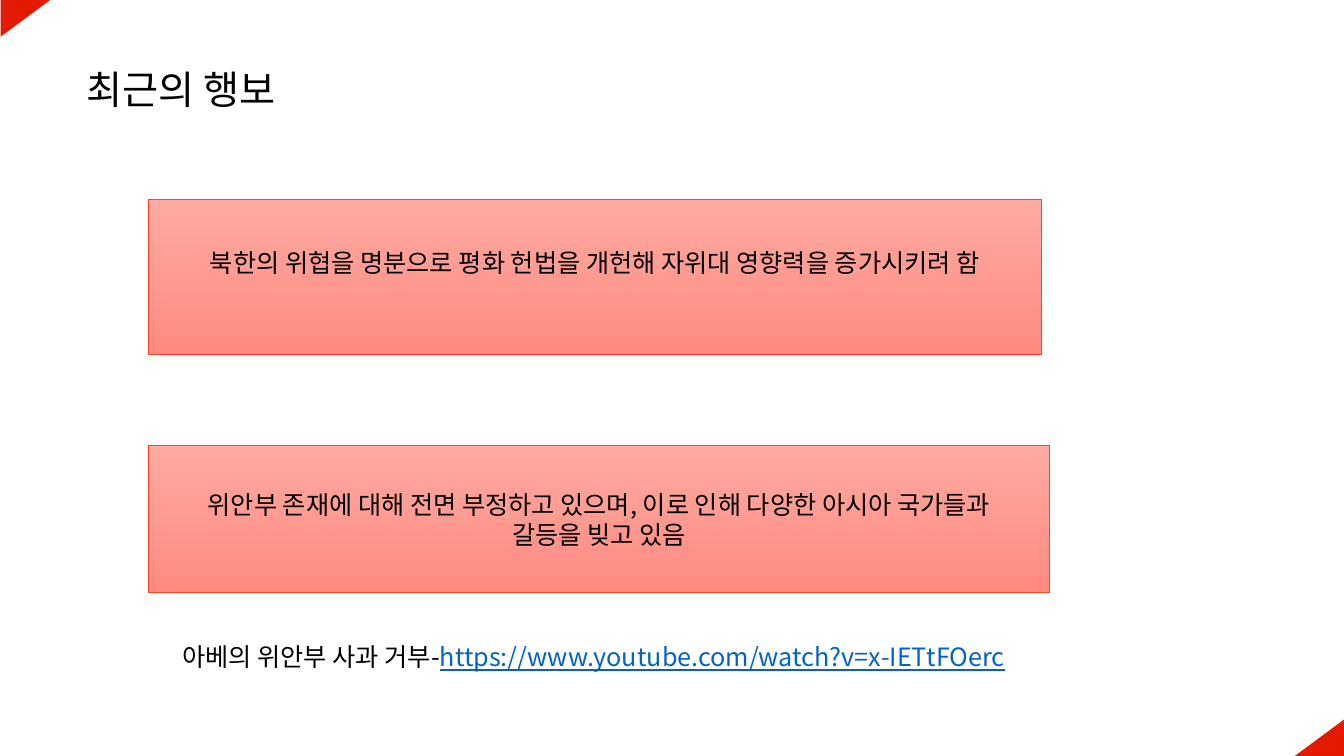
from lxml import etree
from pptx import Presentation
from pptx.dml.color import RGBColor
from pptx.enum import shapes, text
from pptx.oxml import ns
from pptx.util import Inches, Pt

FACE = "Noto Sans CJK KR"
BLACK = RGBColor(0x00, 0x00, 0x00)
RED = RGBColor(0xE4, 0x1A, 0x00)
EDGE = RGBColor(0xFE, 0x43, 0x1E)
LIGHT = RGBColor(0xFF, 0xAA, 0xA2)
DEEP = RGBColor(0xFF, 0x8A, 0x80)
BLUE = RGBColor(0x05, 0x63, 0xC1)


def style(para, size, align):
    para.alignment = align
    font = para.font
    font.size = Pt(size)
    font.name = FACE
    font.color.rgb = BLACK
    # Hangul takes the East Asian typeface
    east = etree.Element(ns.qn("a:ea"), typeface=FACE)
    font._element.find(ns.qn("a:latin")).addnext(east)


def write(shape, lines, size, align, anchor):
    frame = shape.text_frame
    frame.word_wrap = True
    frame.auto_size = text.MSO_AUTO_SIZE.NONE
    frame.vertical_anchor = anchor
    frame.text = "\n".join(lines)
    for para in frame.paragraphs:
        style(para, size, align)


def corner(slide, left, top, turn):
    tri = slide.shapes.add_shape(
        shapes.MSO_SHAPE.RIGHT_TRIANGLE,
        Inches(left), Inches(top), Inches(0.37), Inches(0.5))
    tri.rotation = turn
    tri.shadow.inherit = False
    tri.fill.solid()
    tri.fill.fore_color.rgb = RED
    tri.line.fill.background()


def head(slide, words):
    title = slide.shapes.title
    title.left, title.top = Inches(0.76), Inches(0.6)
    title.width, title.height = Inches(5.63), Inches(0.57)
    write(title, [words], 28, text.PP_ALIGN.LEFT, text.MSO_ANCHOR.TOP)


def panel(slide, top, width, height, lines, foot=0.05):
    box = slide.shapes.add_shape(
        shapes.MSO_SHAPE.RECTANGLE,
        Inches(1.47), Inches(top), Inches(width), Inches(height))
    box.shadow.inherit = False
    box.fill.gradient()
    box.fill.gradient_angle = 270
    for stop, color in zip(box.fill.gradient_stops, (LIGHT, DEEP)):
        stop.color.rgb = color
    box.line.color.rgb = EDGE
    box.line.width = Pt(0.5)
    write(box, lines, 18, text.PP_ALIGN.CENTER, text.MSO_ANCHOR.MIDDLE)
    box.text_frame.margin_bottom = Inches(foot)


def source(slide, label, address):
    box = slide.shapes.add_textbox(
        Inches(1.71), Inches(6.31), Inches(8.5), Inches(0.4))
    write(box, [label], 18, text.PP_ALIGN.LEFT, text.MSO_ANCHOR.TOP)
    run = box.text_frame.paragraphs[0].add_run()
    run.text = address
    run.font.color.rgb = BLUE
    run.font.underline = True


def main():
    deck = Presentation()
    deck.slide_width, deck.slide_height = Inches(13.33), Inches(7.5)
    slide = deck.slides.add_slide(deck.slide_layouts[5])

    # Corner marks
    corner(slide, 0.07, -0.07, 90)
    corner(slide, 12.9, 7.07, 270)

    # Title
    head(slide, "최근의 행보")

    # Statements
    panel(slide, 1.98, 8.86, 1.54,
          ["북한의 위협을 명분으로 평화 헌법을 개헌해 자위대 영향력을 증가시키려 함"],
          foot=0.35)
    panel(slide, 4.42, 8.94, 1.46,
          ["위안부 존재에 대해 전면 부정하고 있으며, 이로 인해 다양한 아시아 국가들과",
           "갈등을 빚고 있음"])

    # Video address
    source(slide, "아베의 위안부 사과 거부-",
           "https://www.youtube.com/watch?v=x-IETtFOerc")

    deck.save("out.pptx")


if __name__ == "__main__":
    main()
